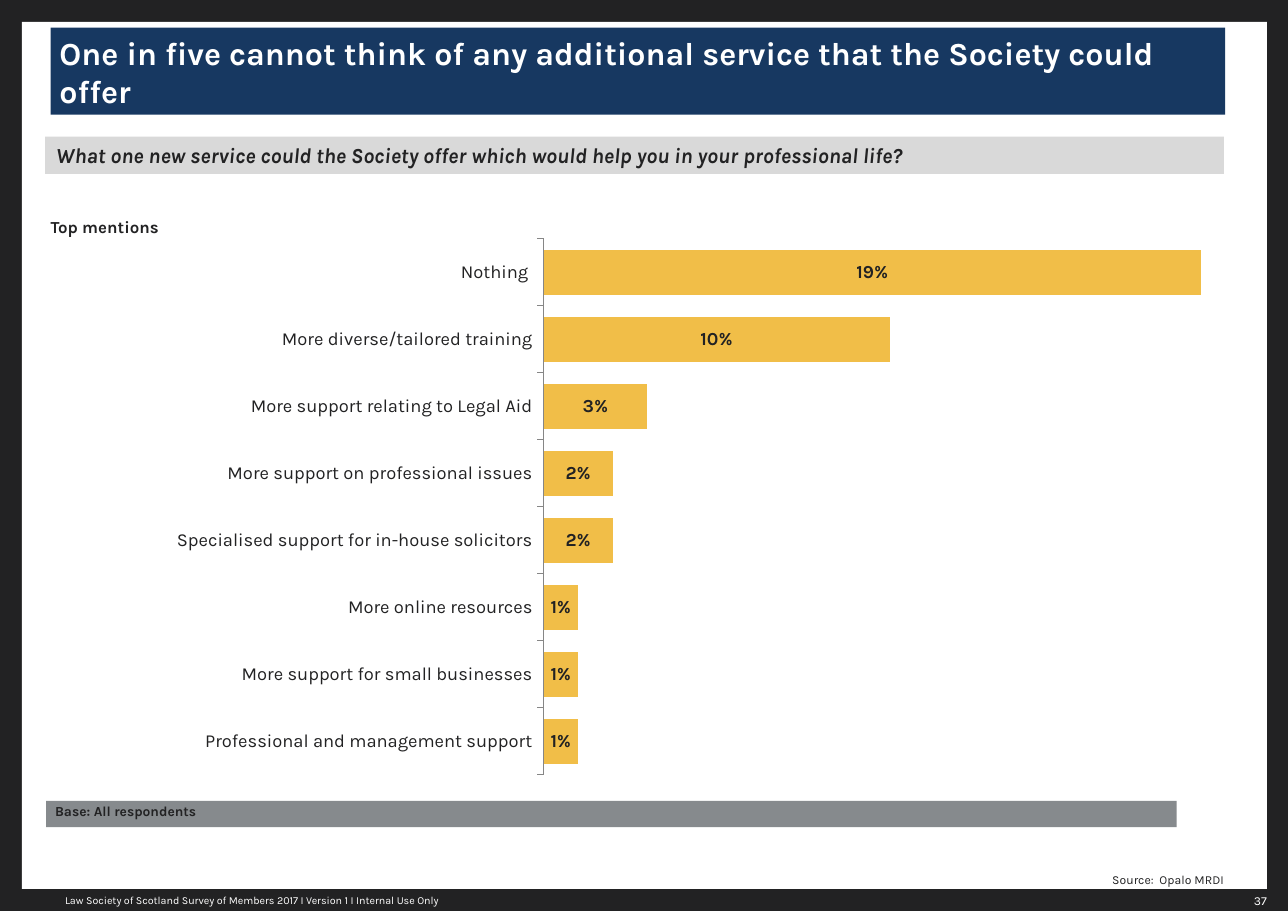
from lxml import etree
from pptx import Presentation
from pptx.chart.data import CategoryChartData
from pptx.dml.color import RGBColor
from pptx.enum.chart import XL_CHART_TYPE, XL_LABEL_POSITION, XL_TICK_MARK
from pptx.enum.shapes import MSO_SHAPE
from pptx.enum.text import MSO_ANCHOR, PP_ALIGN
from pptx.oxml.ns import qn
from pptx.util import Inches, Pt

FONT = "Karla"
COLORS = {
    "dark": "222223",
    "white": "FFFFFF",
    "navy": "173861",
    "light_grey": "D9D9D9",
    "mid_grey": "868A8D",
    "axis": "868686",
    "yellow": "F1BE48",
}
LEFT, RIGHT = PP_ALIGN.LEFT, PP_ALIGN.RIGHT
TOP, MIDDLE, BOTTOM = MSO_ANCHOR.TOP, MSO_ANCHOR.MIDDLE, MSO_ANCHOR.BOTTOM


def color(name):
    return RGBColor.from_string(COLORS[name])


def add_text(text, box, size, ink="dark", fill=None, bold=False, italic=False,
             align=LEFT, anchor=TOP, inset=(0, 0), spacing=1.0, wrap=True):
    """Add text in a box (left, top, width, height), as a filled bar if fill is given."""
    position = [Inches(length) for length in box]
    if fill:
        shape = slide.shapes.add_shape(MSO_SHAPE.RECTANGLE, *position)
        shape.shadow.inherit = False
        shape.fill.solid()
        shape.fill.fore_color.rgb = color(fill)
        shape.line.fill.background()
    else:
        shape = slide.shapes.add_textbox(*position)
    frame = shape.text_frame
    frame.word_wrap = wrap
    frame.vertical_anchor = anchor
    frame.margin_left = frame.margin_right = Inches(inset[0])
    frame.margin_top = frame.margin_bottom = Inches(inset[1])
    paragraph = frame.paragraphs[0]
    paragraph.alignment = align
    paragraph.line_spacing = spacing
    run = paragraph.add_run()
    run.text = text
    run.font.name = FONT
    run.font.size = Pt(size)
    run.font.bold = bold
    run.font.italic = italic
    run.font.color.rgb = color(ink)


presentation = Presentation()
presentation.slide_width = Inches(11.69)
presentation.slide_height = Inches(8.27)
slide = presentation.slides.add_slide(presentation.slide_layouts[6])
slide.background.fill.solid()
slide.background.fill.fore_color.rgb = color("dark")

# Page and footer
page = slide.shapes.add_shape(
    MSO_SHAPE.RECTANGLE, Inches(0.2), Inches(0.2), Inches(11.3), Inches(7.87))
page.shadow.inherit = False
page.fill.solid()
page.fill.fore_color.rgb = color("white")
page.line.fill.background()

add_text("37", (10.95, 8.06, 0.63, 0.23), 8, ink="white", align=RIGHT,
         inset=(0.08, 0.04), spacing=1.1)
add_text("Law Society of Scotland Survey of Members 2017 I Version 1 I Internal Use Only",
         (0.59, 8.07, 5.35, 0.2), 7, ink="white", anchor=MIDDLE, wrap=False)
add_text("Source:  Opalo MRDI", (7.89, 7.85, 3.22, 0.2), 8, align=RIGHT,
         anchor=BOTTOM, spacing=1.1)

# Headings
add_text("One in five cannot think of any additional service that the Society could offer",
         (0.46, 0.25, 10.66, 0.79), 21, ink="white", fill="navy", bold=True,
         anchor=BOTTOM, inset=(0.08, 0.04))
add_text("What one new service could the Society offer which would help you in your "
         "professional life?",
         (0.41, 1.24, 10.7, 0.34), 14, fill="light_grey", bold=True, italic=True,
         inset=(0.1, 0.05))

# Chart of mentions, listed from the bottom bar up
mentions = {
    "Professional and management support": 0.01,
    "More support for small businesses": 0.01,
    "More online resources": 0.01,
    "Specialised support for in-house solicitors": 0.02,
    "More support on professional issues": 0.02,
    "More support relating to Legal Aid": 0.03,
    "More diverse/tailored training": 0.1,
    "Nothing ": 0.19,
}
chart_data = CategoryChartData(number_format="0%")
chart_data.categories = list(mentions)
chart_data.add_series("Series 1", list(mentions.values()))
chart = slide.shapes.add_chart(
    XL_CHART_TYPE.BAR_CLUSTERED, Inches(0.45), Inches(1.92), Inches(10.83), Inches(5.53),
    chart_data).chart
chart.has_legend = False
chart.has_title = False
chart.font.name = FONT
chart.font.size = Pt(12)
chart.font.color.rgb = color("dark")

category_axis = chart.category_axis
category_axis.major_tick_mark = XL_TICK_MARK.OUTSIDE
category_axis.has_major_gridlines = False
category_axis.tick_labels.font.size = Pt(12)
category_axis.format.line.color.rgb = color("axis")
category_axis.format.line.width = Pt(0.75)

value_axis = chart.value_axis
value_axis.minimum_scale = 0
value_axis.maximum_scale = 0.2
value_axis.has_major_gridlines = False
value_axis.visible = False

plot = chart.plots[0]
plot.gap_width = 50
plot.vary_by_categories = False
series = plot.series[0]
series.format.fill.solid()
series.format.fill.fore_color.rgb = color("yellow")
labels = series.data_labels
labels.show_value = True
labels.position = XL_LABEL_POSITION.CENTER
labels.number_format = "0%"
labels.number_format_is_linked = False
labels.font.name = FONT
labels.font.size = Pt(12)
labels.font.bold = True
labels.font.color.rgb = color("dark")

plot_area = chart.element.find(".//" + qn("c:plotArea"))
layout = plot_area.find(qn("c:layout"))
if layout is None:
    layout = etree.Element(qn("c:layout"))
    plot_area.insert(0, layout)
manual_layout = etree.SubElement(layout, qn("c:manualLayout"))
for tag, value in (("layoutTarget", "inner"), ("xMode", "edge"), ("yMode", "edge"),
                   ("x", "0.414"), ("y", "0.045"), ("w", "0.58"), ("h", "0.88")):
    etree.SubElement(manual_layout, qn("c:" + tag)).set("val", value)

# Notes around the chart
add_text("Top mentions", (0.46, 1.95, 1.18, 0.2), 11, bold=True, spacing=1.1)
add_text("Base: All respondents", (0.42, 7.27, 10.26, 0.24), 9, fill="mid_grey",
         bold=True, inset=(0.08, 0.02))

presentation.save("out.pptx")
